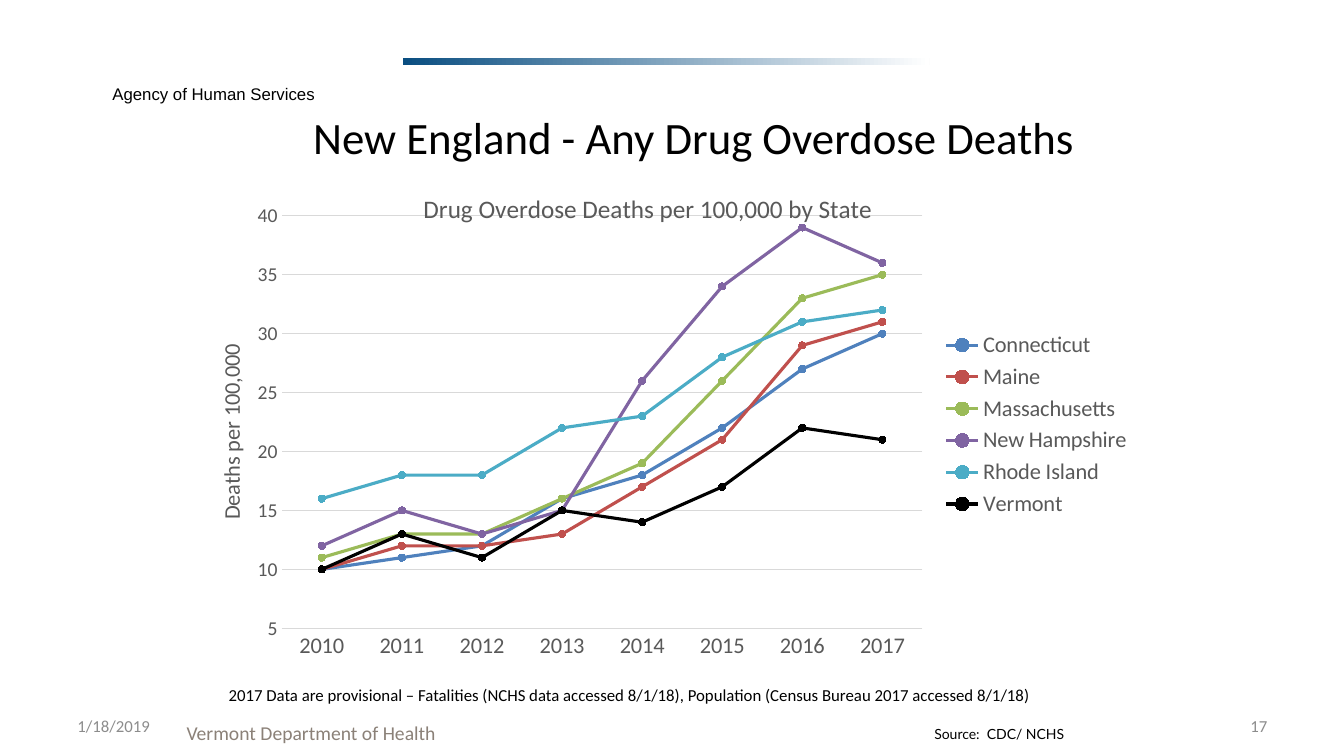
from lxml import etree
from pptx import Presentation
from pptx import util as u
from pptx.chart.data import CategoryChartData
from pptx.dml.color import RGBColor
from pptx.enum import chart as ch, shapes, text
from pptx.oxml.ns import qn

COLORS = {
    "black": "000000", "white": "FFFFFF", "navy": "0A4E81", "footer": "8C8C8C",
    "department": "8B8178", "label": "595959", "grid": "D9D9D9",
}
STATES = {
    "Connecticut": ("4F81BD", [10, 11, 12, 16, 18, 22, 27, 30]),
    "Maine": ("C0504D", [10, 12, 12, 13, 17, 21, 29, 31]),
    "Massachusetts": ("9BBB59", [11, 13, 13, 16, 19, 26, 33, 35]),
    "New Hampshire": ("8064A2", [12, 15, 13, 15, 26, 34, 39, 36]),
    "Rhode Island": ("4BACC6", [16, 18, 18, 22, 23, 28, 31, 32]),
    "Vermont": ("000000", [10, 13, 11, 15, 14, 17, 22, 21]),
}


def write(frame, content, size, color="black", font="Calibri", align="LEFT",
          anchor="TOP", wrap=True, grow=False):
    frame.word_wrap = wrap
    frame.vertical_anchor = text.MSO_ANCHOR[anchor]
    frame.auto_size = text.MSO_AUTO_SIZE["SHAPE_TO_FIT_TEXT" if grow else "NONE"]
    paragraph = frame.paragraphs[0]
    paragraph.alignment = text.PP_ALIGN[align]
    run = paragraph.add_run()
    run.text = content
    run.font.size = u.Pt(size)
    run.font.name = font
    run.font.bold = False
    run.font.color.rgb = RGBColor.from_string(COLORS[color])


def place(part, **settings):
    """Give a chart part a manual layout; settings are the layout's child elements."""
    layout = part.find(qn("c:layout"))
    if layout is None:
        layout = etree.Element(qn("c:layout"))
        part.insert(0 if part.find(qn("c:tx")) is None else 1, layout)
    manual = etree.SubElement(layout, qn("c:manualLayout"))
    for tag, value in settings.items():
        etree.SubElement(manual, qn("c:" + tag)).set("val", str(value))


deck = Presentation()
deck.slide_width, deck.slide_height = u.Cm(33.86), u.Cm(19.05)
slide = deck.slides.add_slide(deck.slide_layouts[5])

# Header
bar = slide.shapes.add_shape(shapes.MSO_SHAPE.RECTANGLE,
                             u.Cm(10.16), u.Cm(1.47), u.Cm(13.26), u.Cm(0.18))
bar.shadow.inherit = False
bar.line.fill.background()
bar.fill.gradient()
bar.fill.gradient_angle = 0
for stop, color in zip(bar.fill.gradient_stops, ("navy", "white")):
    stop.color.rgb = RGBColor.from_string(COLORS[color])

heading = slide.shapes.title
heading.left, heading.top = u.Cm(6.15), u.Cm(2.06)
heading.width, heading.height = u.Cm(22.66), u.Cm(2.74)
write(heading.text_frame, "New England - Any Drug Overdose Deaths", 32,
      align="CENTER", anchor="MIDDLE")

# Overdose chart
data = CategoryChartData()
data.categories = [str(year) for year in range(2010, 2018)]
for state, (_, rates) in STATES.items():
    data.add_series(state, rates)
chart = slide.shapes.add_chart(ch.XL_CHART_TYPE.LINE_MARKERS, u.Cm(5.11), u.Cm(4.45),
                               u.Cm(23.67), u.Cm(12.5), data).chart
chart.font.name = "Calibri"
chart.font.size = u.Pt(10)
chart.plots[0].vary_by_categories = False
place(chart.plots[0]._element.getparent(), layoutTarget="inner", xMode="edge",
      yMode="edge", x=0.084, y=0.079, w=0.682, h=0.832)

chart.has_title = True
years, deaths = chart.category_axis, chart.value_axis
for caption, content, size, x, y in (
    (chart.chart_title, "Drug Overdose Deaths per 100,000 by State", 18, 0.23, 0.02),
    (deaths.axis_title, "Deaths per 100,000", 16, 0.01, 0.33),
):
    write(caption.text_frame, content, size, "label", align="CENTER")
    place(caption._element, xMode="edge", yMode="edge", x=x, y=y)
chart.chart_title.include_in_layout = True
deaths.axis_title._element.find(".//" + qn("a:bodyPr")).set("rot", "-5400000")

chart.has_legend = True
chart.legend.position = ch.XL_LEGEND_POSITION.RIGHT
chart.legend.include_in_layout = False
for font, size in ((years.tick_labels.font, 16), (deaths.tick_labels.font, 14),
                   (chart.legend.font, 16)):
    font.name = "Calibri"
    font.size = u.Pt(size)
    font.color.rgb = RGBColor.from_string(COLORS["label"])

deaths.minimum_scale, deaths.maximum_scale, deaths.major_unit = 5, 40, 5
deaths.has_major_gridlines = True
for axis in (years, deaths):
    axis.major_tick_mark = axis.minor_tick_mark = ch.XL_TICK_MARK.NONE
for line in (years.format.line, deaths.major_gridlines.format.line):
    line.color.rgb = RGBColor.from_string(COLORS["grid"])
    line.width = u.Pt(0.75)
deaths.format.line.fill.background()

for series in chart.plots[0].series:
    state_color = RGBColor.from_string(STATES[series.name][0])
    series.smooth = False
    series.format.line.color.rgb = state_color
    series.format.line.width = u.Pt(2.25)
    series.marker.style = ch.XL_MARKER_STYLE.CIRCLE
    series.marker.size = 5
    series.marker.format.fill.solid()
    series.marker.format.fill.fore_color.rgb = state_color
    series.marker.format.line.color.rgb = state_color

# Agency name, footer and notes on the data
footer = dict(size=12, color="footer", anchor="MIDDLE")
for content, left, top, width, height, style in (
    ("Agency of Human Services", 0.61, 1.98, 9.55, 0.76,
     dict(size=12, font="Arial", align="CENTER", grow=True)),
    ("17", 24.28, 17.78, 7.9, 1.02, dict(footer, align="RIGHT")),
    ("1/18/2019", 1.7, 17.78, 7.9, 1.02, footer),
    ("Vermont Department of Health", 4.45, 17.96, 7.01, 1.02,
     dict(size=14, color="department", anchor="MIDDLE")),
    ("Source:  CDC/ NCHS", 23.29, 18.16, 9.14, 0.69,
     dict(size=10, font="Lato", grow=True)),
    ("2017 Data are provisional – Fatalities (NCHS data accessed 8/1/18), "
     "Population (Census Bureau 2017 accessed 8/1/18)", 5.51, 17.12, 21.29, 0.76,
     dict(size=12, wrap=False, grow=True)),
):
    box = slide.shapes.add_textbox(u.Cm(left), u.Cm(top), u.Cm(width), u.Cm(height))
    write(box.text_frame, content, **style)

deck.save("out.pptx")
